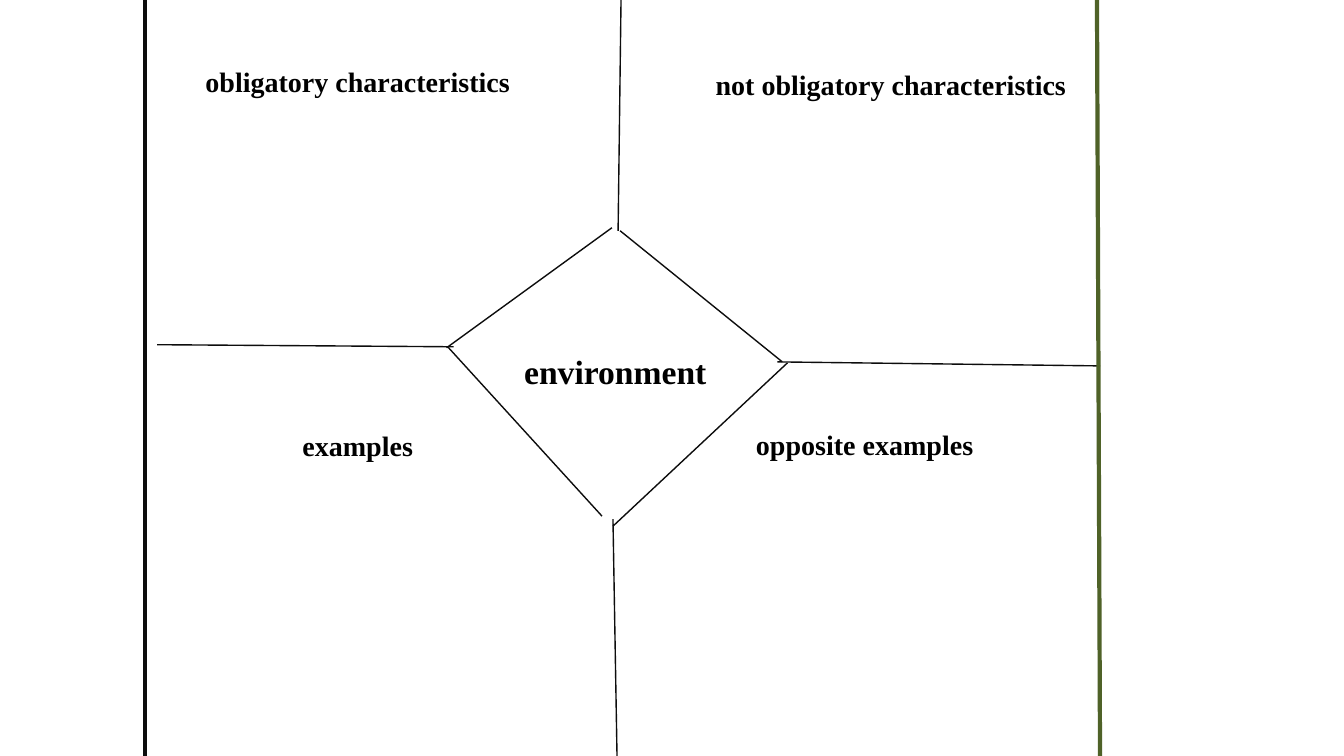
from typing import NamedTuple

from lxml.etree import SubElement
from pptx import Presentation
from pptx.dml.color import RGBColor
from pptx.enum.shapes import MSO_CONNECTOR as Connector
from pptx.enum.text import MSO_AUTO_SIZE as AutoSize
from pptx.oxml.ns import qn
from pptx.slide import Slide
from pptx.util import Inches, Pt

SLIDE_WIDTH = Inches(13.33)
SLIDE_HEIGHT = Inches(7.5)
INK = RGBColor(0x0D, 0x0D, 0x0D)
BLACK = RGBColor(0, 0, 0)
OLIVE = RGBColor(0x4F, 0x62, 0x28)
FONT = "Times New Roman"


class Stroke(NamedTuple):
    x1: float
    y1: float
    x2: float
    y2: float
    color: RGBColor = INK
    weight: float = 1


class Label(NamedTuple):
    text: str
    left: float
    top: float
    width: float
    height: float = 5.87
    size: int = 20


DIAMOND = [
    Stroke(45.53, 30.13, 33.23, 46),
    Stroke(46.14, 30.53, 58.21, 47.87),
    Stroke(33.31, 45.87, 44.79, 68.27),
    Stroke(58.59, 48, 45.61, 69.6),
]
DIVIDERS = [
    Stroke(46.21, 0, 45.99, 30.53),
    Stroke(57.84, 47.87, 81.85, 48.4),
    Stroke(33.76, 45.87, 11.7, 45.6),
    Stroke(45.61, 68.67, 45.91, 100),
]
BORDERS = [
    Stroke(10.8, 0, 10.8, 100, weight=3),
    Stroke(81.62, 0, 81.85, 100, OLIVE, 3),
]
LABELS = [
    Label("not obligatory characteristics", 52.51, 8.27, 39.83),
    Label("obligatory characteristics", 14.55, 7.87, 27.39),
    Label("examples", 21.76, 56, 11.78),
    Label("opposite examples", 55.51, 55.87, 18.6),
    Label("environment", 38.26, 45.73, 16.13, 6.8, 24),
]


def across(percent: float) -> int:
    return round(SLIDE_WIDTH * percent / 100)


def down(percent: float) -> int:
    return round(SLIDE_HEIGHT * percent / 100)


def draw_stroke(page: Slide, stroke: Stroke) -> None:
    line = page.shapes.add_connector(
        Connector.STRAIGHT,
        across(stroke.x1), down(stroke.y1), across(stroke.x2), down(stroke.y2),
    )
    line.line.color.rgb = stroke.color
    line.line.width = Pt(stroke.weight)
    SubElement(line._element.spPr, qn("a:effectLst"))


def write_text(page: Slide, text: str, *, left: float, top: float, width: float,
               height: float, size: int, bold: bool = True,
               color: RGBColor = BLACK) -> None:
    box = page.shapes.add_textbox(across(left), down(top), across(width), down(height))
    frame = box.text_frame
    frame.word_wrap = True
    frame.auto_size = AutoSize.SHAPE_TO_FIT_TEXT
    span = frame.paragraphs[0].add_run()
    span.text = text
    span.font.name = FONT
    span.font.size = Pt(size)
    span.font.bold = bold
    span.font.color.rgb = color


def main() -> None:
    deck = Presentation()
    deck.slide_width = SLIDE_WIDTH
    deck.slide_height = SLIDE_HEIGHT
    page = deck.slides.add_slide(deck.slide_layouts[6])
    for stroke in DIVIDERS + DIAMOND:
        draw_stroke(page, stroke)
    for label in LABELS:
        write_text(page, **label._asdict())
    for border in BORDERS:
        draw_stroke(page, border)
    deck.save("out.pptx")


if __name__ == "__main__":
    main()
